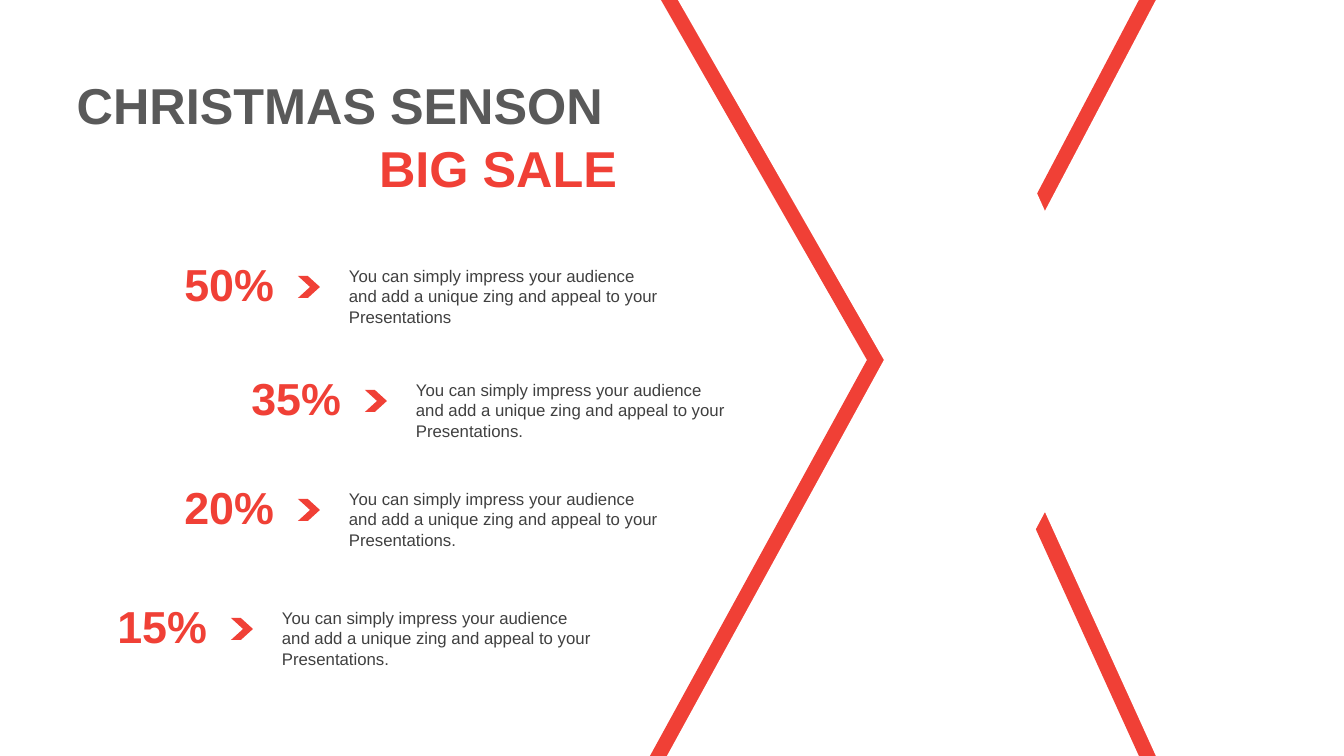
from pptx import Presentation
from pptx.dml.color import RGBColor
from pptx.enum.shapes import MSO_SHAPE
from pptx.enum.text import PP_ALIGN
from pptx.util import Pt

EMU_PER_PX = 914400 / 100.8
THEME = {
    "font": "Arial",
    "red": RGBColor(0xF0, 0x40, 0x36),
    "white": RGBColor(0xFF, 0xFF, 0xFF),
    "heading": RGBColor(0x59, 0x59, 0x59),
    "body": RGBColor(0x40, 0x40, 0x40),
    "title_size": 36,
    "percent_size": 32,
    "body_size": 12,
}


def px(length):
    return round(length * EMU_PER_PX)


def add_text(slide, text, left, top, width, height, *, size, color,
             bold=False, align=PP_ALIGN.LEFT):
    box = slide.shapes.add_textbox(px(left), px(top), px(width), px(height))
    box.text_frame.word_wrap = True
    paragraph = box.text_frame.paragraphs[0]
    paragraph.alignment = align
    run = paragraph.add_run()
    run.text = text
    run.font.name = THEME["font"]
    run.font.size = Pt(size)
    run.font.bold = bold
    run.font.color.rgb = color


presentation = Presentation()
presentation.slide_width = px(1344)
presentation.slide_height = px(756)
slide = presentation.slides.add_slide(presentation.slide_layouts[6])

# Cross-shaped panel: the white one, shifted right, leaves a red edge
panel_points = [
    (661, 0), (933, 0), (1028, 211), (1139, 0), (1309, 0), (1309, 145), (1187, 360),
    (1309, 581), (1309, 756), (1139, 756), (1028, 512), (898, 756), (650, 756), (867, 360),
]
for shift, color in ((0, THEME["red"]), (17, THEME["white"])):
    points = [(x + shift, y) for x, y in panel_points]
    builder = slide.shapes.build_freeform(*points[0], scale=EMU_PER_PX)
    builder.add_line_segments(points[1:], close=True)
    panel = builder.convert_to_shape()
    panel.shadow.inherit = False
    panel.fill.solid()
    panel.fill.fore_color.rgb = color
    panel.line.fill.background()

# Discount rows
pitch = "You can simply impress your audience and add a unique zing and appeal to your Presentations"
discounts = [
    ("50%", 117, 252, pitch),
    ("35%", 184, 366, pitch + "."),
    ("20%", 117, 475, pitch + "."),
    ("15%", 50, 594, pitch + "."),
]
for percent, left, top, description in discounts:
    add_text(slide, percent, left, top, 167, 65, size=THEME["percent_size"],
             color=THEME["red"], bold=True, align=PP_ALIGN.RIGHT)
    add_text(slide, description, left + 222, top + 9, 332, 72,
             size=THEME["body_size"], color=THEME["body"])
    chevron = slide.shapes.add_shape(
        MSO_SHAPE.CHEVRON, px(left + 181), px(top + 24), px(22), px(22))
    chevron.adjustments[0] = 0.55
    chevron.shadow.inherit = False
    chevron.fill.solid()
    chevron.fill.fore_color.rgb = THEME["red"]
    chevron.line.fill.background()

# Title lines
for title, top, color in (("CHRISTMAS SENSON ", 69, THEME["heading"]),
                          ("BIG SALE", 132, THEME["red"])):
    add_text(slide, title, 59, top, 568, 72, size=THEME["title_size"],
             color=color, bold=True, align=PP_ALIGN.RIGHT)

presentation.save("out.pptx")
